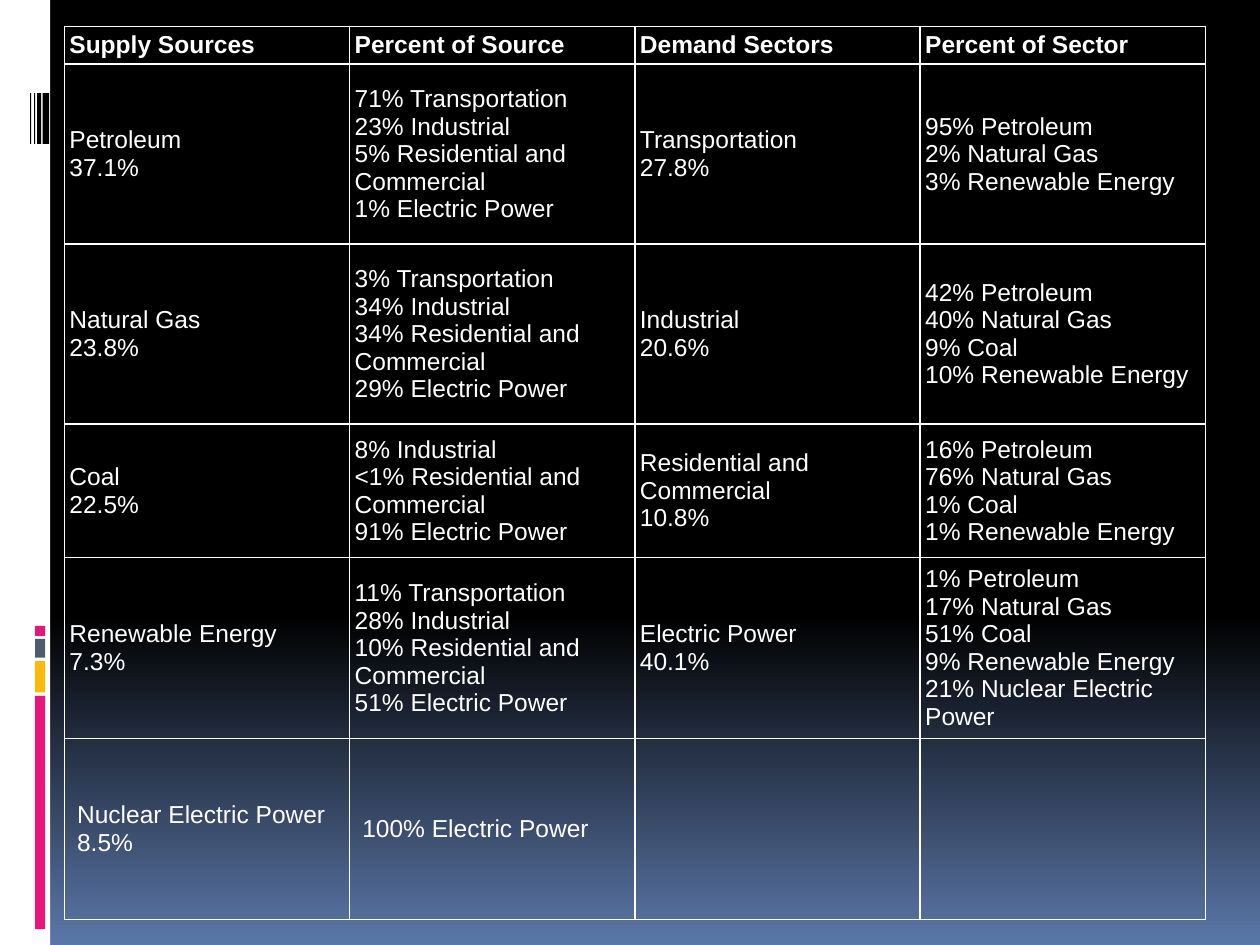
"""Build a slide with a table of energy supply sources and demand sectors."""
from copy import deepcopy

from lxml import etree
from pptx import Presentation
from pptx import util as u
from pptx.dml.color import RGBColor
from pptx.enum import shapes, text
from pptx.oxml import ns

WHITE = RGBColor(0xFF, 0xFF, 0xFF)
BLACK = RGBColor(0x00, 0x00, 0x00)
BLUE = RGBColor(0x5B, 0x77, 0xA8)
PINK = RGBColor(0xEA, 0x15, 0x7A)
YELLOW = RGBColor(0xFE, 0xB8, 0x0A)
SLATE = RGBColor(0x4E, 0x5B, 0x6F)


def add_bar(slide, left, top, width, height, color):
    shape = slide.shapes.add_shape(
        shapes.MSO_SHAPE.RECTANGLE, u.Cm(left), u.Cm(top), u.Cm(width), u.Cm(height))
    shape.shadow.inherit = False
    shape.fill.solid()
    shape.fill.fore_color.rgb = color
    shape.line.fill.background()


def add_borders(cell):
    properties = cell._tc.get_or_add_tcPr()
    for position, side in enumerate(("lnL", "lnR", "lnT", "lnB")):
        line = etree.Element(ns.qn(f"a:{side}"), w=str(u.Pt(1)))
        fill = etree.SubElement(line, ns.qn("a:solidFill"))
        etree.SubElement(fill, ns.qn("a:srgbClr"), val=str(WHITE))
        properties.insert(position, line)


presentation = Presentation()
presentation.slide_width = u.Cm(25.4)
presentation.slide_height = u.Cm(19.05)
slide = presentation.slides.add_slide(presentation.slide_layouts[6])

background = slide.background.fill
background.gradient()
background.gradient_angle = 270
first_stop = background.gradient_stops[0]._gs
first_stop.addnext(deepcopy(first_stop))
for stop, position, color in zip(background.gradient_stops, (0, 0.65, 1), (BLACK, BLACK, BLUE)):
    stop.position = position
    stop.color.rgb = color

add_bar(slide, 0, 0, 1.01, 19.05, WHITE)
for top, height, color in ((14.03, 4.7, PINK), (13.33, 0.63, YELLOW),
                           (12.88, 0.38, SLATE), (12.62, 0.2, PINK)):
    add_bar(slide, 0.71, top, 0.2, height, color)
for left, width in ((0.86, 0.13), (0.75, 0.08), (0.69, 0.02), (0.61, 0.02)):
    add_bar(slide, left, 1.88, width, 1.02, BLACK)

rows = [
    ("Supply Sources", "Percent of Source", "Demand Sectors", "Percent of Sector"),
    ("Petroleum\n37.1%",
     "71% Transportation\n23% Industrial\n5% Residential and Commercial\n1% Electric Power",
     "Transportation\n27.8%",
     "95% Petroleum\n2% Natural Gas\n3% Renewable Energy"),
    ("Natural Gas\n23.8%",
     "3% Transportation\n34% Industrial\n34% Residential and Commercial\n29% Electric Power",
     "Industrial\n20.6%",
     "42% Petroleum\n40% Natural Gas\n9% Coal\n10% Renewable Energy"),
    ("Coal\n22.5%",
     "8% Industrial\n<1% Residential and Commercial\n91% Electric Power",
     "Residential and Commercial\n10.8%",
     "16% Petroleum\n76% Natural Gas\n1% Coal\n1% Renewable Energy"),
    ("Renewable Energy\n7.3%",
     "11% Transportation\n28% Industrial\n10% Residential and Commercial\n51% Electric Power",
     "Electric Power\n40.1%",
     "1% Petroleum\n17% Natural Gas\n51% Coal\n9% Renewable Energy\n21% Nuclear Electric Power"),
    ("Nuclear Electric Power\n8.5%", "100% Electric Power", "", ""),
]
row_heights = (0.76, 3.63, 3.63, 2.69, 3.65, 3.65)

table = slide.shapes.add_table(
    len(rows), 4, u.Cm(1.3), u.Cm(0.53), u.Cm(23), u.Cm(sum(row_heights))).table
table.first_row = False
table.horz_banding = False
for column in table.columns:
    column.width = u.Cm(5.75)

for row_index, (values, height) in enumerate(zip(rows, row_heights)):
    table.rows[row_index].height = u.Cm(height)
    for column_index, value in enumerate(values):
        cell = table.cell(row_index, column_index)
        cell.fill.background()
        add_borders(cell)
        cell.vertical_anchor = text.MSO_ANCHOR.MIDDLE
        if row_index < len(rows) - 1:
            cell.margin_left = cell.margin_right = u.Cm(0.1)
            cell.margin_top = cell.margin_bottom = u.Cm(0.05)
        paragraph = cell.text_frame.paragraphs[0]
        paragraph.text = value.replace("\n", "\v")
        for run in paragraph.runs:
            run.font.name = "Arial"
            run.font.size = u.Pt(14)
            run.font.bold = row_index == 0
            run.font.color.rgb = WHITE

presentation.save("out.pptx")
